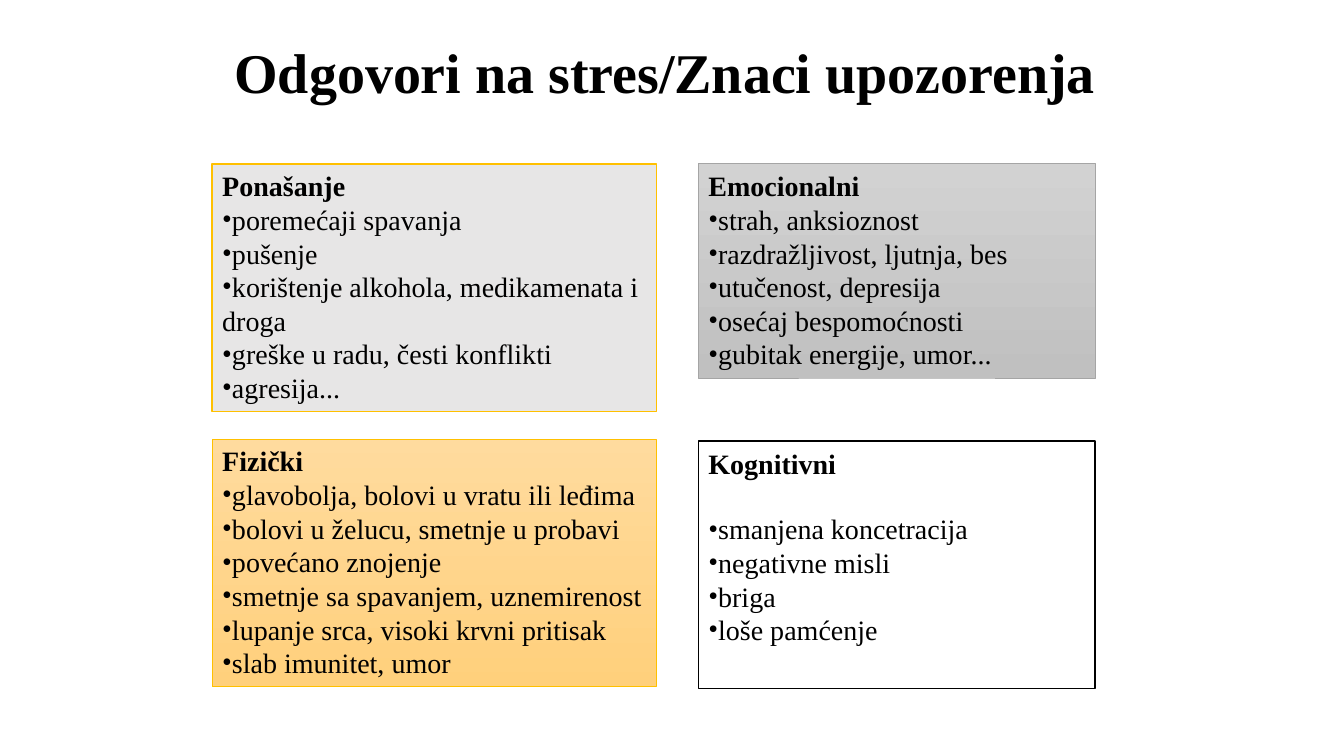
from lxml.etree import SubElement
from pptx import Presentation
from pptx.dml.color import RGBColor
from pptx.enum.text import MSO_ANCHOR, MSO_AUTO_SIZE, PP_ALIGN
from pptx.oxml.ns import qn
from pptx.util import Pt

PX = 9525
FONT = "Times New Roman"
BLACK = RGBColor(0x00, 0x00, 0x00)
WHITE = RGBColor(0xFF, 0xFF, 0xFF)
PALE_GRAY = RGBColor(0xE7, 0xE6, 0xE6)
LIGHT_GRAY = RGBColor(0xD2, 0xD2, 0xD2)
MID_GRAY = RGBColor(0xC0, 0xC0, 0xC0)
EDGE_GRAY = RGBColor(0xA5, 0xA5, 0xA5)
GOLD = RGBColor(0xFF, 0xC0, 0x00)
LIGHT_AMBER = RGBColor(0xFF, 0xDB, 0x9E)
AMBER = RGBColor(0xFF, 0xD0, 0x7C)

LEFT, RIGHT = 202, 665
LEFT_WIDTH, RIGHT_WIDTH = 423, 378

GROUPS = [
    dict(box=(LEFT, 156, LEFT_WIDTH, 236), heading="Ponašanje",
         signs=["poremećaji spavanja", "pušenje",
                "korištenje alkohola, medikamenata i droga",
                "greške u radu, česti konflikti", "agresija..."],
         colors=[PALE_GRAY], edge=GOLD, edge_width=1),
    dict(box=(RIGHT, 156, RIGHT_WIDTH, 204), heading="Emocionalni",
         signs=["strah, anksioznost", "razdražljivost, ljutnja, bes",
                "utučenost, depresija", "osećaj bespomoćnosti",
                "gubitak energije, umor..."],
         colors=[LIGHT_GRAY, MID_GRAY], edge=EDGE_GRAY, edge_width=0.5),
    dict(box=(LEFT, 418, LEFT_WIDTH, 236), heading="Fizički",
         signs=["glavobolja, bolovi u vratu ili leđima",
                "bolovi u želucu, smetnje u probavi", "povećano znojenje",
                "smetnje sa spavanjem, uznemirenost",
                "lupanje srca, visoki krvni pritisak", "slab imunitet, umor"],
         colors=[LIGHT_AMBER, AMBER], edge=GOLD, edge_width=0.5),
    dict(box=(RIGHT, 420, RIGHT_WIDTH, 236), heading="Kognitivni",
         signs=["smanjena koncetracija", "negativne misli", "briga",
                "loše pamćenje"],
         colors=[WHITE], edge=BLACK, edge_width=1, heading_gap=23),
]


def place(holder, box, anchor, wrap):
    holder.left, holder.top, holder.width, holder.height = (v * PX for v in box)
    frame = holder.text_frame
    frame.auto_size = MSO_AUTO_SIZE.NONE
    frame.word_wrap = wrap
    frame.vertical_anchor = anchor
    return frame


def write(paragraph, text, size=20, bold=False, align=PP_ALIGN.LEFT,
          bullet=False, gap_after=0):
    run = paragraph.add_run()
    run.text = text
    run.font.name = FONT
    run.font.size = Pt(size)
    run.font.bold = bold
    run.font.color.rgb = BLACK
    paragraph.alignment = align
    paragraph.line_spacing = 1.0
    paragraph.space_before = Pt(0)
    paragraph.space_after = Pt(gap_after)
    properties = paragraph._p.get_or_add_pPr()
    properties.set("marL", "0")
    properties.set("indent", "0")
    if bullet:
        SubElement(properties, qn("a:buFont")).set("typeface", FONT)
        SubElement(properties, qn("a:buChar")).set("char", "•")
    else:
        SubElement(properties, qn("a:buNone"))


def paint(holder, colors, edge, edge_width):
    if len(colors) == 1:
        holder.fill.solid()
        holder.fill.fore_color.rgb = colors[0]
    else:
        holder.fill.gradient()
        holder.fill.gradient_angle = 270
        for stop, color in zip(holder.fill.gradient_stops, colors):
            stop.color.rgb = color
    holder.line.color.rgb = edge
    holder.line.width = Pt(edge_width)


def fill_title(holder, box, text):
    frame = place(holder, box, MSO_ANCHOR.MIDDLE, wrap=False)
    write(frame.paragraphs[0], text, size=40, bold=True, align=PP_ALIGN.CENTER)


def fill_group(holder, box, heading, signs, colors, edge, edge_width,
               heading_gap=0):
    frame = place(holder, box, MSO_ANCHOR.TOP, wrap=True)
    paint(holder, colors, edge, edge_width)
    write(frame.paragraphs[0], heading, bold=True, gap_after=heading_gap)
    for sign in signs:
        write(frame.add_paragraph(), sign, bullet=True)


def main():
    deck = Presentation()
    deck.slide_width, deck.slide_height = 1280 * PX, 720 * PX
    slide = deck.slides.add_slide(deck.slide_layouts.get_by_name("Comparison"))
    fill_title(slide.shapes.title, (209, 31, 848, 74),
               "Odgovori na stres/Znaci upozorenja")
    for index, group in enumerate(GROUPS, start=1):
        fill_group(slide.placeholders[index], **group)
    deck.save("out.pptx")


if __name__ == "__main__":
    main()
